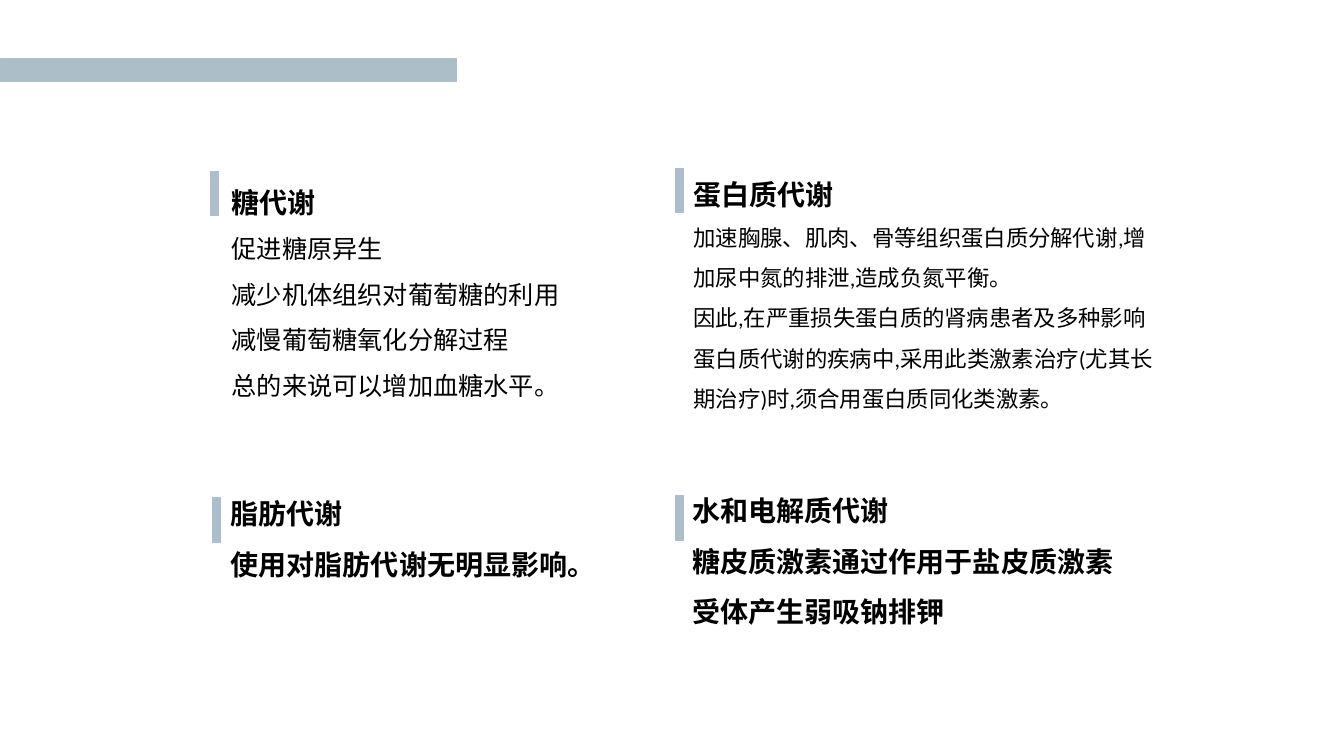
from pptx import Presentation
from pptx.dml.color import RGBColor
from pptx.enum.shapes import MSO_SHAPE
from pptx.enum.text import MSO_AUTO_SIZE
from pptx.util import Inches, Pt

THEME = {
    "fill": "ACBEC8", "band_line": "ADBFC9", "marker_line": "AEBADC", "text": "000000",
    "head_font": "Arial", "body_font": "Calibri", "head_size": 20, "spacing": 1.5,
}
BAND = (0, 0.58, 4.53, 0.23)
MARKER_SIZE = (0.08, 0.44)

SECTIONS = [
    {"box": (2.2, 1.62, 3.96, 2.14), "marker": (2.09, 1.7), "size": 18, "strong": False,
     "head": "糖代谢",
     "body": ["促进糖原异生", "减少机体组织对葡萄糖的利用",
              "减慢葡萄糖氧化分解过程", "总的来说可以增加血糖水平。"]},
    {"box": (6.78, 1.54, 4.85, 2.72), "marker": (6.7, 1.67), "size": 16, "strong": False,
     "head": "蛋白质代谢",
     "body": ["加速胸腺、肌肉、骨等组织蛋白质分解代谢,增加尿中氮的排泄,造成负氮平衡。",
              "因此,在严重损失蛋白质的肾病患者及多种影响蛋白质代谢的疾病中,"
              "采用此类激素治疗(尤其长期治疗)时,须合用蛋白质同化类激素。"]},
    {"box": (2.19, 4.88, 5.56, 1.06), "marker": (2.11, 4.94), "size": 20, "strong": True,
     "head": "脂肪代谢",
     "body": ["使用对脂肪代谢无明显影响。"]},
    {"box": (6.77, 4.85, 4.4, 1.51), "marker": (6.7, 4.92), "size": 20, "strong": True,
     "head": "水和电解质代谢",
     "body": ["糖皮质激素通过作用于盐皮质激素受体产生弱吸钠排钾"]},
]


def color(name):
    return RGBColor.from_string(THEME[name])


def add_bar(s, box, line):
    sp = s.shapes.add_shape(MSO_SHAPE.RECTANGLE, *map(Inches, box))
    sp.shadow.inherit = False
    sp.fill.solid()
    sp.fill.fore_color.rgb = color("fill")
    sp.line.color.rgb = color(line)
    sp.line.width = Pt(1)


def style(p, text, font, size, bold, spacing):
    p.text = text
    p.line_spacing = spacing
    p.font.name = THEME[font]
    p.font.size = Pt(size)
    p.font.bold = bold
    p.font.color.rgb = color("text")


def add_section(s, section):
    strong = section["strong"]
    tf = s.shapes.add_textbox(*map(Inches, section["box"])).text_frame
    tf.word_wrap = True
    tf.auto_size = MSO_AUTO_SIZE.SHAPE_TO_FIT_TEXT if strong else MSO_AUTO_SIZE.NONE
    style(tf.paragraphs[0], section["head"], "head_font", THEME["head_size"], True,
          1.0 if strong else THEME["spacing"])
    for text in section["body"]:
        style(tf.add_paragraph(), text, "head_font" if strong else "body_font",
              section["size"], strong, THEME["spacing"])


def main():
    prs = Presentation()
    prs.slide_width, prs.slide_height = Inches(13.33), Inches(7.5)
    s = prs.slides.add_slide(prs.slide_layouts[6])
    add_bar(s, BAND, "band_line")
    for section in SECTIONS:
        add_section(s, section)
        add_bar(s, section["marker"] + MARKER_SIZE, "marker_line")
    prs.save("out.pptx")


if __name__ == "__main__":
    main()
